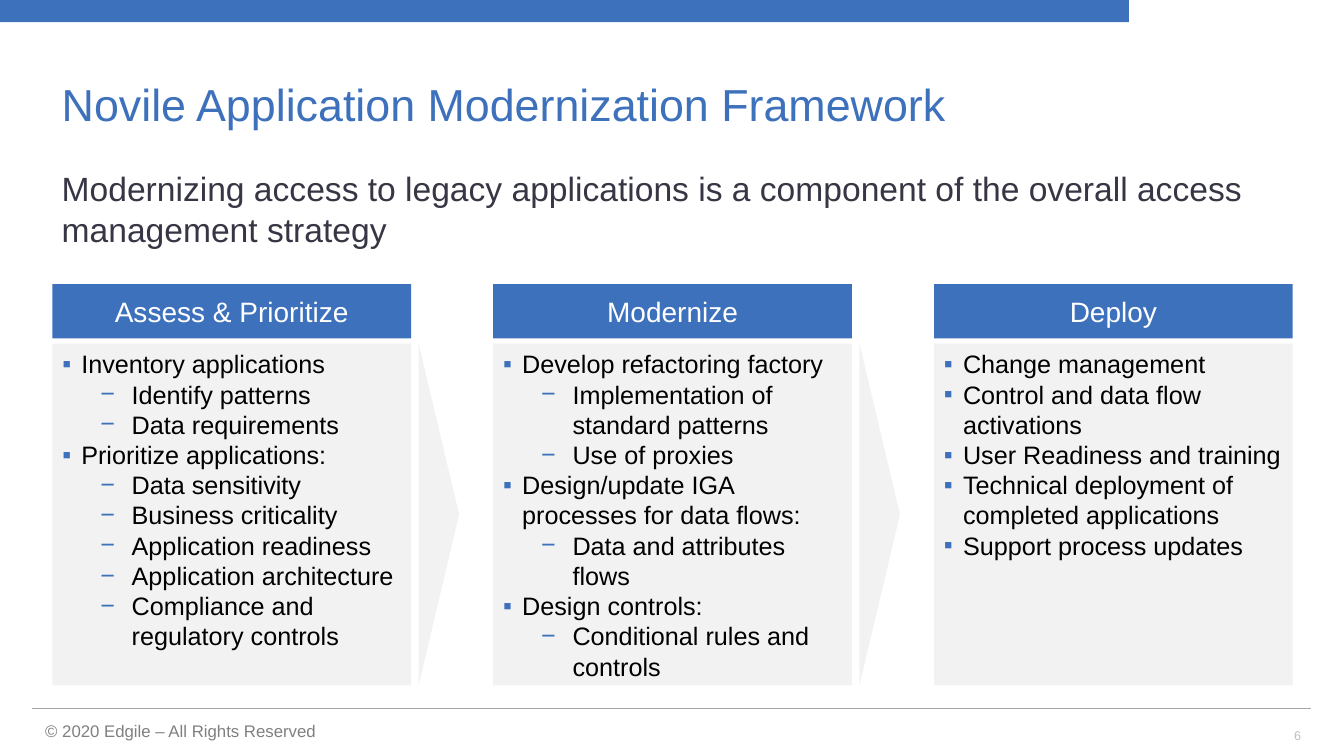
from dataclasses import dataclass

from lxml import etree
from pptx import Presentation
from pptx.dml.color import RGBColor
from pptx.enum.shapes import MSO_CONNECTOR, MSO_SHAPE
from pptx.enum.text import MSO_ANCHOR, MSO_AUTO_SIZE, PP_ALIGN
from pptx.oxml.ns import qn
from pptx.shapes.autoshape import Shape
from pptx.slide import Slide
from pptx.text.text import TextFrame, _Paragraph
from pptx.util import Cm, Pt

RECT, TRIANGLE = MSO_SHAPE.RECTANGLE, MSO_SHAPE.ISOSCELES_TRIANGLE
STRAIGHT = MSO_CONNECTOR.STRAIGHT
TOP, MIDDLE, BOTTOM = MSO_ANCHOR.TOP, MSO_ANCHOR.MIDDLE, MSO_ANCHOR.BOTTOM
LEFT, CENTER, RIGHT = PP_ALIGN.LEFT, PP_ALIGN.CENTER, PP_ALIGN.RIGHT
NO_FIT = MSO_AUTO_SIZE.NONE

BLUE = RGBColor(0x3E, 0x71, 0xBC)
PALE = RGBColor(0xF2, 0xF2, 0xF2)
WHITE = RGBColor(0xFF, 0xFF, 0xFF)
BLACK = RGBColor(0x00, 0x00, 0x00)
SLATE = RGBColor(0x36, 0x36, 0x44)
GRAY = RGBColor(0x80, 0x80, 0x80)
SILVER = RGBColor(0xBF, 0xBF, 0xBF)
RULE = RGBColor(0xA6, 0xA6, 0xA6)


@dataclass(frozen=True)
class Box:
    left: float
    top: float
    width: float
    height: float

    def lengths(self) -> tuple[Cm, Cm, Cm, Cm]:
        return Cm(self.left), Cm(self.top), Cm(self.width), Cm(self.height)


@dataclass(frozen=True)
class Style:
    size: float
    color: RGBColor
    align: PP_ALIGN = LEFT
    anchor: MSO_ANCHOR = TOP


@dataclass(frozen=True)
class Bullet:
    mark: str
    margin: float
    hang: float


@dataclass(frozen=True)
class Phase:
    name: str
    items: list[tuple[int, str]]


BULLETS = [Bullet("▪", 0.48, 0.48), Bullet("−", 1.75, 0.79)]
ITEM = Style(18, BLACK)
HEAD = Style(20, WHITE, CENTER, MIDDLE)

EDGE, PITCH, WIDTH = 1.32, 11.11, 9.04
HEAD_TOP, HEAD_HIGH = 7.16, 1.37
LIST_TOP, LIST_HIGH = 8.66, 8.61
ARROW, GAP = 1.02, 0.19

PHASES = [
    Phase("Assess & Prioritize", [
        (0, "Inventory applications"),
        (1, "Identify patterns"),
        (1, "Data requirements"),
        (0, "Prioritize applications:"),
        (1, "Data sensitivity"),
        (1, "Business criticality"),
        (1, "Application readiness"),
        (1, "Application architecture"),
        (1, "Compliance and regulatory controls"),
    ]),
    Phase("Modernize", [
        (0, "Develop refactoring factory"),
        (1, "Implementation of standard patterns"),
        (1, "Use of proxies"),
        (0, "Design/update IGA processes for data flows:"),
        (1, "Data and attributes flows"),
        (0, "Design controls:"),
        (1, "Conditional rules and controls"),
    ]),
    Phase("Deploy", [
        (0, "Change management"),
        (0, "Control and data flow activations"),
        (0, "User Readiness and training"),
        (0, "Technical deployment of completed applications"),
        (0, "Support process updates"),
    ]),
]


def format_text(para: _Paragraph, style: Style) -> None:
    para.alignment = style.align
    para.font.color.rgb = style.color
    for key, value in {"name": "Arial", "size": Pt(style.size), "bold": False}.items():
        setattr(para.font, key, value)


def write(frame: TextFrame, text: str, style: Style, wrap: bool = True) -> _Paragraph:
    frame.text = text
    looks = {"word_wrap": wrap, "auto_size": NO_FIT, "vertical_anchor": style.anchor}
    for key, value in looks.items():
        setattr(frame, key, value)
    para = frame.paragraphs[0]
    format_text(para, style)
    return para


def add_bullet(para: _Paragraph, bullet: Bullet) -> None:
    props = para._p.get_or_add_pPr()
    props.set("marL", str(Cm(bullet.margin)))
    props.set("indent", str(-Cm(bullet.hang)))
    color = etree.SubElement(props, qn("a:buClr"))
    etree.SubElement(color, qn("a:srgbClr")).set("val", str(BLUE))
    etree.SubElement(props, qn("a:buFont")).set("typeface", "Arial")
    etree.SubElement(props, qn("a:buChar")).set("char", bullet.mark)


def add_block(slide: Slide, box: Box, fill: RGBColor, kind: MSO_SHAPE = RECT) -> Shape:
    shape = slide.shapes.add_shape(kind, *box.lengths())
    shape.shadow.inherit = False
    shape.fill.solid()
    shape.fill.fore_color.rgb = fill
    shape.line.fill.background()
    return shape


def add_label(slide: Slide, box: Box, text: str, style: Style) -> TextFrame:
    frame = slide.shapes.add_textbox(*box.lengths()).text_frame
    write(frame, text, style, wrap=False)
    return frame


def fill_holder(holder: Shape, box: Box, text: str, style: Style) -> _Paragraph:
    holder.left, holder.top, holder.width, holder.height = box.lengths()
    return write(holder.text_frame, text, style)


def add_phase(slide: Slide, phase: Phase, left: float) -> None:
    panel = add_block(slide, Box(left, LIST_TOP, WIDTH, LIST_HIGH), PALE)
    frame = panel.text_frame
    frame.word_wrap = True
    frame.vertical_anchor = TOP
    for index, (level, text) in enumerate(phase.items):
        para = frame.add_paragraph() if index else frame.paragraphs[0]
        para.text = text
        para.level = level
        add_bullet(para, BULLETS[level])
        format_text(para, ITEM)
    head = add_block(slide, Box(left, HEAD_TOP, WIDTH, HEAD_HIGH), BLUE)
    write(head.text_frame, phase.name, HEAD)


def add_arrow(slide: Slide, left: float) -> None:
    """Place a triangle so that its turned outline starts at left."""
    shift = (LIST_HIGH - ARROW) / 2
    box = Box(left - shift, LIST_TOP + shift, LIST_HIGH, ARROW)
    add_block(slide, box, PALE, TRIANGLE).rotation = 90


def add_frame(slide: Slide) -> None:
    """Draw the top bar, the rule and the footer."""
    add_block(slide, Box(0, 0, 28.45, 0.56), BLUE)
    rule = slide.shapes.add_connector(STRAIGHT, Cm(0.81), Cm(17.86), Cm(33.05), Cm(17.86))
    rule.line.color.rgb = RULE
    rule.line.width = Pt(0.75)
    etree.SubElement(rule._element.spPr, qn("a:effectLst"))
    notice = add_label(slide, Box(0.81, 17.98, 7.67, 0.86),
                       "© 2020 Edgile – All Rights Reserved", Style(12, GRAY, LEFT, MIDDLE))
    insets = {"margin_left": 0.33, "margin_right": 0.33,
              "margin_top": 0.18, "margin_bottom": 0.18}
    for key, value in insets.items():
        setattr(notice, key, Cm(value))
    add_label(slide, Box(32.13, 18.21, 0.91, 0.64), "6", Style(9, SILVER, RIGHT, MIDDLE))


def main() -> None:
    deck = Presentation()
    deck.slide_width, deck.slide_height = Cm(33.87), Cm(19.05)
    slide = deck.slides.add_slide(deck.slide_layouts[1])
    add_frame(slide)

    title = fill_holder(slide.shapes.title, Box(1.3, 0.28, 31.29, 3.15),
                        "Novile Application Modernization Framework",
                        Style(32, BLUE, LEFT, BOTTOM))
    title.line_spacing = 0.9
    lead = fill_holder(slide.placeholders[1], Box(1.3, 4.11, 31.29, 2.34),
                       "Modernizing access to legacy applications is a component "
                       "of the overall access management strategy", Style(24, SLATE))
    lead.space_before, lead.space_after = Pt(0), Pt(2)
    props = lead._p.get_or_add_pPr()
    props.set("marL", "0")
    props.set("indent", "0")
    etree.SubElement(props, qn("a:buNone"))

    for index, phase in enumerate(PHASES):
        left = EDGE + index * PITCH
        add_phase(slide, phase, left)
        if index < len(PHASES) - 1:
            add_arrow(slide, left + WIDTH + GAP)

    deck.save("out.pptx")


if __name__ == "__main__":
    main()
